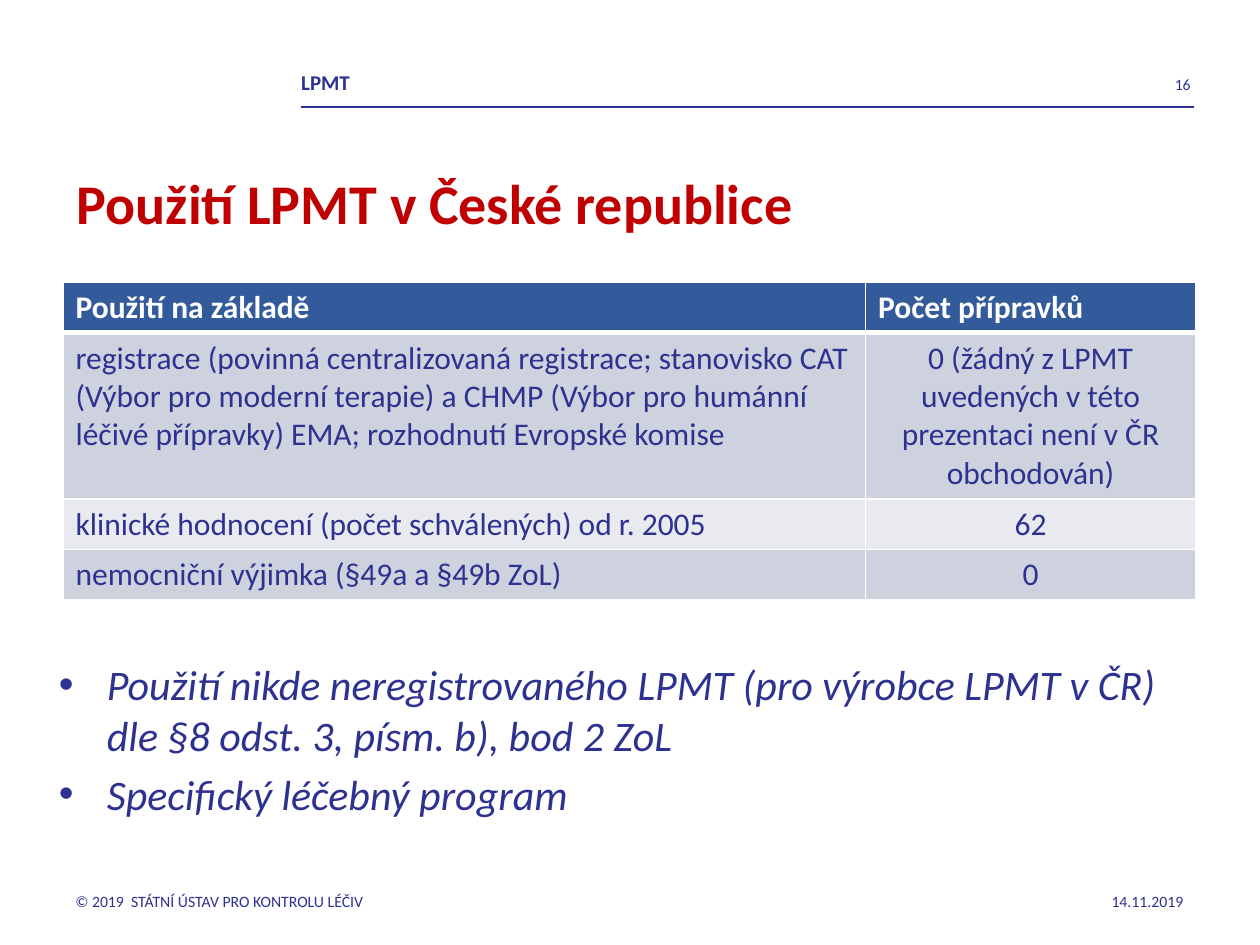
import pptx
import pptx.util
import pptx.dml.color
import pptx.enum.shapes
import pptx.enum.text
import pptx.oxml
import pptx.oxml.ns
from pptx.util import Inches

NAVY, RED, WHITE = "2D3291", "C00000", "FFFFFF"
HEADER_FILL, BAND_FILLS = "335A9A", ("CED2DE", "E8EAEF")
LEFT, CENTER, RIGHT = (pptx.enum.text.PP_ALIGN.LEFT, pptx.enum.text.PP_ALIGN.CENTER,
                       pptx.enum.text.PP_ALIGN.RIGHT)
TOP, MIDDLE = pptx.enum.text.MSO_ANCHOR.TOP, pptx.enum.text.MSO_ANCHOR.MIDDLE

ROWS = [
    ("Použití na základě", "Počet přípravků"),
    ("registrace (povinná centralizovaná registrace; stanovisko CAT (Výbor pro moderní terapie) "
     "a CHMP (Výbor pro humánní léčivé přípravky) EMA; rozhodnutí Evropské komise",
     "0 (žádný z LPMT uvedených v této prezentaci není v ČR obchodován)"),
    ("klinické hodnocení (počet schválených) od r. 2005", "62"),
    ("nemocniční výjimka (§49a a §49b ZoL)", "0"),
]
BULLETS = [
    "Použití nikde neregistrovaného LPMT (pro výrobce LPMT v ČR) dle §8 odst. 3, písm. b), bod 2 ZoL",
    "Specifický léčebný program",
]


def color(value):
    return pptx.dml.color.RGBColor.from_string(value)


def add_xml(parent, tag, content="", **attributes):
    """Append a DrawingML element, with optional child markup."""
    settings = "".join(f' {name}="{value}"' for name, value in attributes.items())
    parent.append(pptx.oxml.parse_xml(
        f'<a:{tag} {pptx.oxml.ns.nsdecls("a")}{settings}>{content}</a:{tag}>'))


def write_text(paragraph, text, size=9, fill=NAVY, bold=False, italic=False, align=LEFT):
    paragraph.alignment = align
    font = paragraph.font
    run = paragraph.add_run()
    run.text = text
    for font in (paragraph.font, run.font):
        font.name = "Calibri"
        font.size = pptx.util.Pt(size)
        font.bold, font.italic = bold, italic
        font.color.rgb = color(fill)


def add_text_box(slide, box, text=None, anchor=MIDDLE, inset=True, **text_format):
    frame = slide.shapes.add_textbox(*map(Inches, box)).text_frame
    frame.word_wrap = True
    frame.vertical_anchor = anchor
    if not inset:
        frame.margin_left = frame.margin_right = frame.margin_top = frame.margin_bottom = 0
    if text:
        write_text(frame.paragraphs[0], text, **text_format)
    return frame


def add_header(slide, box):
    left, top, width, height = box
    line_y = Inches(top + height)
    line = slide.shapes.add_connector(pptx.enum.shapes.MSO_CONNECTOR.STRAIGHT,
                                      Inches(left), line_y, Inches(left + width), line_y)
    line.line.color.rgb = color(NAVY)
    line.line.width = pptx.util.Pt(0.75)
    add_xml(line._element.spPr, "effectLst")
    add_text_box(slide, (left, top, 5.51, 0.28), "LPMT", anchor=TOP, inset=False,
                 size=12, bold=True)
    add_text_box(slide, (left + width - 1.21, top + 0.04, 1.18, 0.24), "16", anchor=TOP,
                 inset=False, align=RIGHT)


def add_title(slide, box, text):
    title = slide.shapes.title
    title.left, title.top, title.width, title.height = map(Inches, box)
    title.text_frame.vertical_anchor = MIDDLE
    write_text(title.text_frame.paragraphs[0], text, size=32, fill=RED, bold=True)


def add_borders(cell, bottom_width):
    properties = cell._tc.get_or_add_tcPr()
    for side, width in (("lnL", 1), ("lnR", 1), ("lnT", 1), ("lnB", bottom_width)):
        add_xml(properties, side, f'<a:solidFill><a:srgbClr val="{WHITE}"/></a:solidFill>',
                w=pptx.util.Pt(width))


def add_usage_table(slide, box):
    table = slide.shapes.add_table(len(ROWS), 2, *map(Inches, box)).table
    for column, width in zip(table.columns, (6.37, 2.62)):
        column.width = Inches(width)
    for row, height in zip(table.rows, (0.4, 1.32, 0.4, 0.4)):
        row.height = Inches(height)
    for row_index, texts in enumerate(ROWS):
        header = row_index == 0
        for column_index, text in enumerate(texts):
            cell = table.cell(row_index, column_index)
            # Borders come before the fill in the cell properties
            add_borders(cell, 3 if header else 1)
            cell.fill.solid()
            cell.fill.fore_color.rgb = color(
                HEADER_FILL if header else BAND_FILLS[(row_index - 1) % 2])
            write_text(cell.text_frame.paragraphs[0], text, size=18, bold=header,
                       fill=WHITE if header else NAVY,
                       align=CENTER if column_index and not header else LEFT)


def add_bullets(slide, box):
    frame = add_text_box(slide, box, anchor=TOP)
    for index, text in enumerate(BULLETS):
        paragraph = frame.add_paragraph() if index else frame.paragraphs[0]
        if index:
            paragraph.space_before = pptx.util.Pt(4.8)
        properties = paragraph._p.get_or_add_pPr()
        properties.set("marL", str(Inches(0.38)))
        properties.set("indent", str(-Inches(0.38)))
        add_xml(properties, "buFont", typeface="Arial")
        add_xml(properties, "buChar", char="•")
        write_text(paragraph, text, size=24, italic=True)


def add_footer(slide, box):
    left, top, width, height = box
    add_text_box(slide, (left, top, 3.17, height), "© 2019  STÁTNÍ ÚSTAV PRO KONTROLU LÉČIV")
    add_text_box(slide, (left + width - 1.97, top, 1.97, height), "14.11.2019", align=RIGHT)


def main():
    presentation = pptx.Presentation()
    presentation.slide_width, presentation.slide_height = Inches(10), Inches(7.5)
    slide = presentation.slides.add_slide(presentation.slide_layouts[5])
    add_header(slide, (2.39, 0.55, 7.09, 0.3))
    add_title(slide, (0.51, 0.98, 9, 1.25), "Použití LPMT v České republice")
    add_usage_table(slide, (0.5, 2.24, 8.99, 2.52))
    add_bullets(slide, (0.37, 5.18, 9, 1.7))
    add_footer(slide, (0.5, 6.95, 8.99, 0.4))
    presentation.save("out.pptx")


if __name__ == "__main__":
    main()
